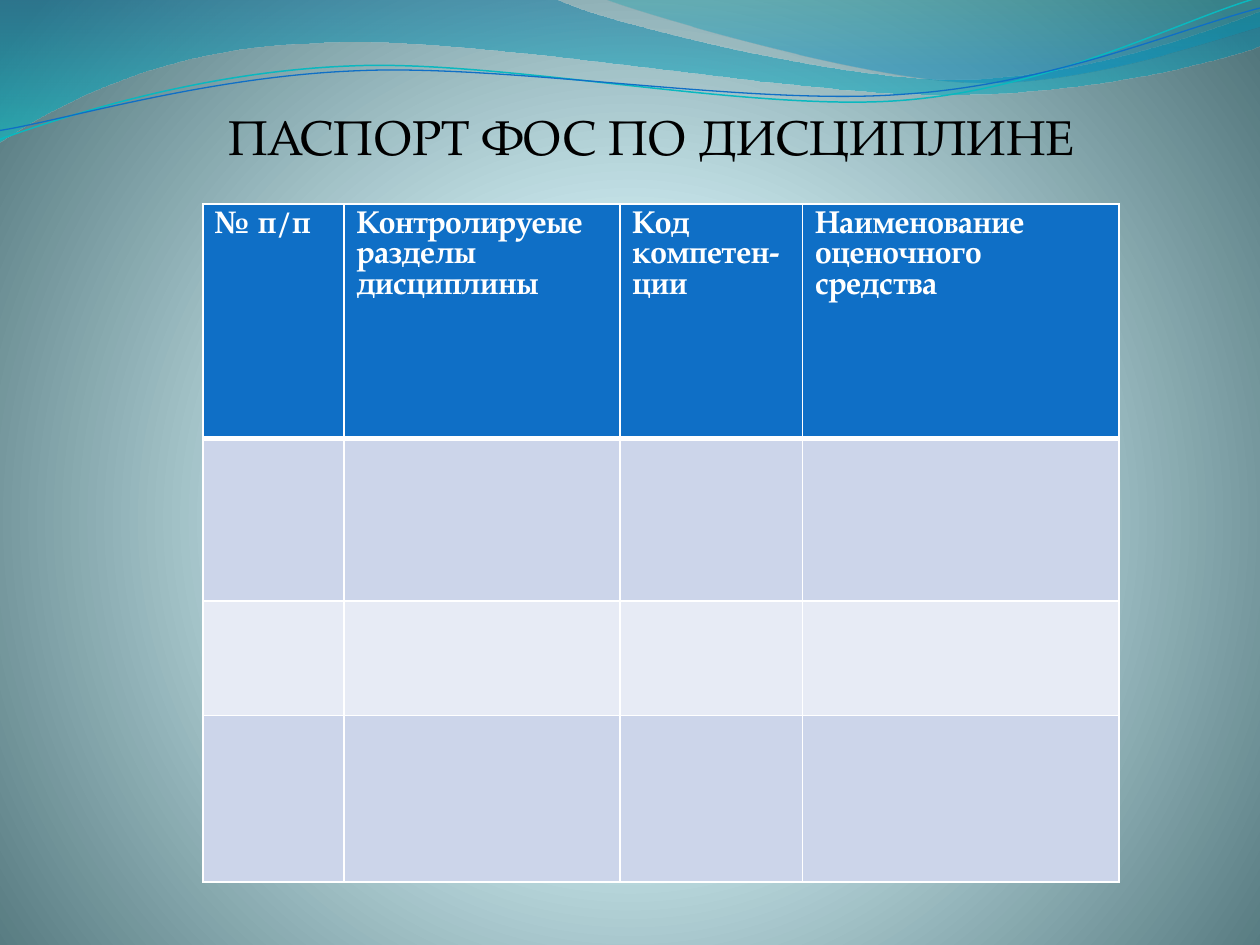
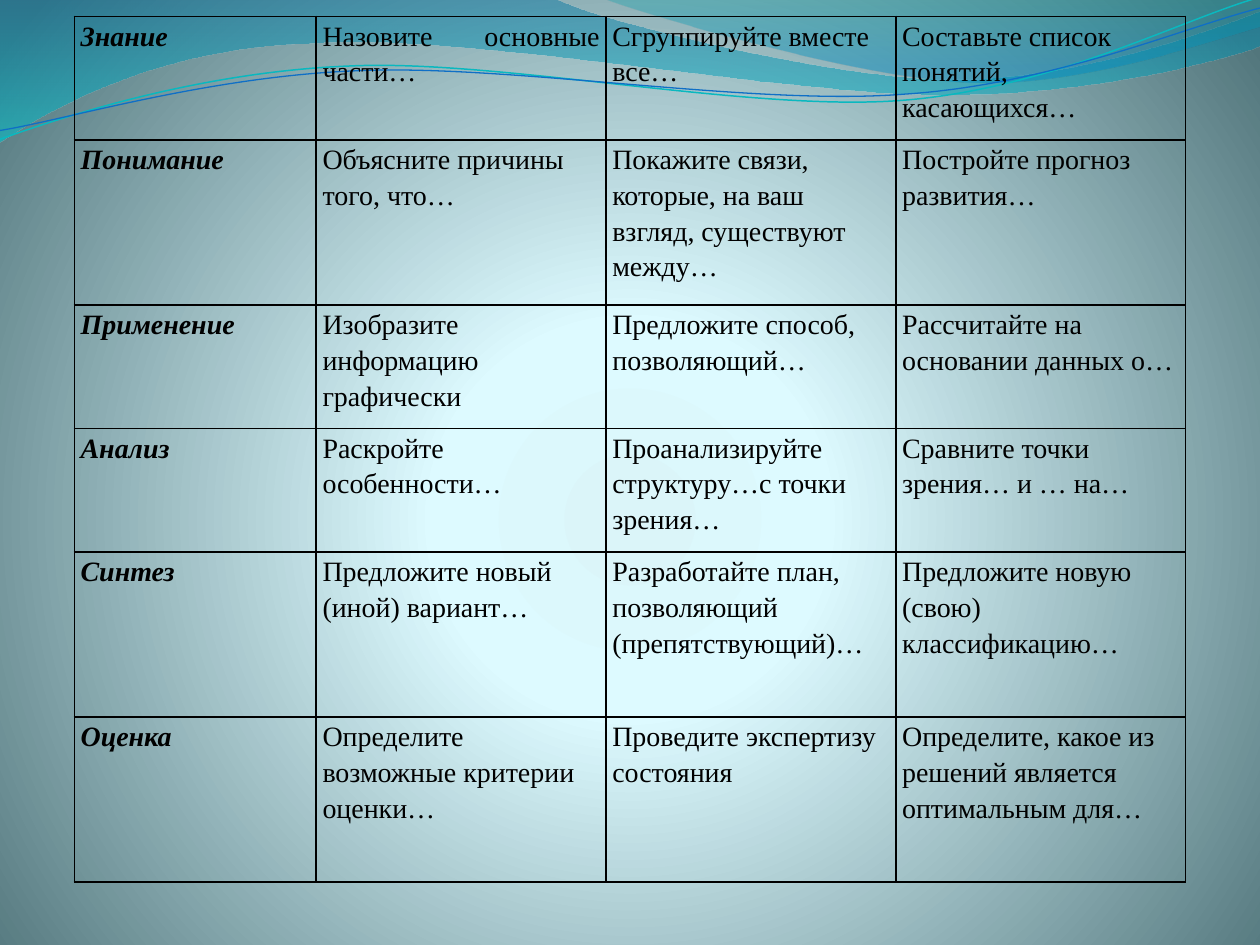
from lxml.etree import SubElement
from pptx import Presentation
from pptx.dml.color import RGBColor
from pptx.enum.text import MSO_ANCHOR as Anchor, PP_ALIGN as Align
from pptx.oxml import parse_xml
from pptx.oxml.ns import nsdecls, qn
from pptx.util import Inches, Pt

rgb = RGBColor.from_string
BLUE, TEAL, WHITE, BLACK = "0F6FC6", "0AB8BF", "FFFFFF", "000000"
BAND_DARK, BAND_LIGHT = "CCD5EA", "E7EBF5"
HEAD_FONT, BODY_FONT = "TeX Gyre Pagella", "Times New Roman"
DOWNWARD = '<a:lin ang="5400000" scaled="1"/>'
FROM_CENTRE = ('<a:path path="circle"><a:fillToRect l="10000" t="110000" '
               'r="10000" b="100000"/></a:path>')


def paint_gradient(owner, fill, stops, direction):
    """Fill with stops of (percent, colour, opacity percent)."""
    fill.gradient()
    plain = next(owner.element.iter(qn("a:gradFill")))
    marks = "".join(
        f'<a:gs pos="{pos * 1000}"><a:srgbClr val="{colour}">'
        f'<a:alpha val="{opacity * 1000}"/></a:srgbClr></a:gs>'
        for pos, colour, opacity in stops)
    plain.getparent().replace(plain, parse_xml(
        f'<a:gradFill {nsdecls("a")} rotWithShape="1">'
        f'<a:gsLst>{marks}</a:gsLst>{direction}</a:gradFill>'))


def add_grid(slide, left, top, widths, heights, border, head_rule=1):
    """Add a table with ruled cells; head_rule is the line under row one."""
    grid = slide.shapes.add_table(
        len(heights), len(widths), Inches(left), Inches(top),
        Inches(sum(widths)), Inches(sum(heights))).table
    grid.first_row = grid.horz_banding = False
    for column, width in zip(grid.columns, widths):
        column.width = Inches(width)
    for r, height in enumerate(heights):
        grid.rows[r].height = Inches(height)
        for cell in grid.rows[r].cells:
            properties = cell._tc.get_or_add_tcPr()
            for side in "LRTB":
                under_head = (r, side) in ((0, "B"), (1, "T"))
                rule = SubElement(properties, qn(f"a:ln{side}"),
                                  w=str(Pt(head_rule if under_head else 1)))
                paint = SubElement(rule, qn("a:solidFill"))
                SubElement(paint, qn("a:srgbClr"), val=border)
    return grid


deck = Presentation()
deck.slide_width, deck.slide_height = Inches(10), Inches(7.5)
passport, questions = [deck.slides.add_slide(deck.slide_layouts[6])
                       for _ in range(2)]

# Shared background
master = deck.slide_master
paint_gradient(master, master.background.fill,
               [(0, "DBF5F9", 100), (25, "DDFAFF", 100), (100, "52767C", 100)],
               FROM_CENTRE)

# Shared waves: a pair is a straight step, six numbers are a Bézier curve
bands = [
    ([(0, 0), (4.4, -0.01), (4.76, 0.17, 6.64, 0.63, 7.58, 0.63),
      (8.53, 0.63, 9.58, 0.26, 10, 0.09), (10.01, 0.36),
      (9.83, 0.44, 8.7, 0.76, 7.46, 0.75), (6.22, 0.75, 3.82, 0.28, 2.57, 0.34),
      (1.29, 0.36, 0.46, 0.83, -0.01, 1.13)],
     [(0, "0074A1", 45), (100, "00C6CF", 55)]),
    ([(4.79, -0.01), (5.09, 0.11, 6.82, 0.62, 7.69, 0.65),
      (8.56, 0.69, 9.61, 0.32, 10, 0.21), (10, 0)],
     [(0, "00A1A9", 30), (80, "008BBF", 45)]),
]
strands = [
    ([(-0.02, 0.87), (0.47, 0.72, 1.58, 0.41, 2.78, 0.42),
      (3.96, 0.42, 5.91, 0.93, 7.12, 0.9), (8.32, 0.87, 9.4, 0.36, 10, 0.22)],
     (TEAL, 0.85)),
    ([(-0.02, 0.8), (0.46, 0.75, 1.64, 0.45, 2.83, 0.46),
      (4.03, 0.46, 5.96, 0.89, 7.16, 0.85), (8.35, 0.83, 9.42, 0.42, 10.02, 0.3)],
     (BLUE, 0.75)),
]
STRAND_TILT = 357.3

for number, (outline, look) in enumerate(bands + strands):
    is_band = isinstance(look, list)
    start, *rest = [(Inches(step[-2]), Inches(step[-1])) for step in outline]
    builder = passport.shapes.build_freeform(*start)
    builder.add_line_segments(rest, close=is_band)
    wave = builder.convert_to_shape()
    straights = list(wave.element.iter(qn("a:lnTo")))
    for straight, step in zip(straights, outline[1:]):
        if len(step) == 6:
            curve = parse_xml(f'<a:cubicBezTo {nsdecls("a")}/>')
            for x, y in zip(step[::2], step[1::2]):
                SubElement(curve, qn("a:pt"), x=str(Inches(x) - wave.left),
                           y=str(Inches(y) - wave.top))
            straight.getparent().replace(straight, curve)
    wave.shadow.inherit = False
    if is_band:
        paint_gradient(wave, wave.fill, look, DOWNWARD)
        wave.line.fill.background()
    else:
        colour, weight = look
        wave.fill.background()
        wave.line.color.rgb = rgb(colour)
        wave.line.width = Pt(weight)
        wave.rotation = STRAND_TILT
    # Move the wave to the master, so that every slide shows it
    next(wave.element.iter(qn("p:cNvPr"))).set("id", str(100 + number))
    master.shapes.element.append(wave.element)

# Slide 1: title
heading = passport.shapes.add_textbox(Inches(0.67), Inches(0.44),
                                      Inches(9), Inches(0.87)).text_frame
heading.word_wrap = True
heading.vertical_anchor = Anchor.BOTTOM
heading.margin_left = heading.margin_right = heading.margin_bottom = 0
heading.text = "ПАСПОРТ ФОС ПО ДИСЦИПЛИНЕ"
heading.paragraphs[0].alignment = Align.CENTER
title_font = heading.paragraphs[0].runs[0].font
title_font.name, title_font.size = HEAD_FONT, Pt(28)
title_font.color.rgb = rgb(BLACK)

# Slide 1: passport form with empty rows
form = add_grid(passport, 1.61, 1.62, [1.12, 2.19, 1.45, 2.51],
                [1.86, 1.29, 0.91, 1.32], WHITE, head_rule=3)
for row, band in zip(form.rows, [BLUE, BAND_DARK, BAND_LIGHT, BAND_DARK]):
    for cell in row.cells:
        cell.fill.solid()
        cell.fill.fore_color.rgb = rgb(band)
form_heads = ["№ п/п", "Контролируеые разделы дисциплины",
              "Код компетен-ции", "Наименование оценочного средства"]
for cell, head in zip(form.rows[0].cells, form_heads):
    cell.text_frame.text = head
    font = cell.text_frame.paragraphs[0].runs[0].font
    font.name, font.size, font.bold = HEAD_FONT, Pt(18), True
    font.color.rgb = rgb(WHITE)

# Slide 2: question starters by level of learning
levels = [
    ("Знание", "Назовите основные части…", "Сгруппируйте вместе все…",
     "Составьте список понятий, касающихся…"),
    ("Понимание", "Объясните причины того, что…",
     "Покажите связи, которые, на ваш взгляд, существуют между…",
     "Постройте прогноз развития…"),
    ("Применение", "Изобразите информацию графически",
     "Предложите способ, позволяющий…", "Рассчитайте на основании данных о…"),
    ("Анализ", "Раскройте особенности…",
     "Проанализируйте структуру…с точки зрения…",
     "Сравните точки зрения… и … на…"),
    ("Синтез", "Предложите новый (иной) вариант…",
     "Разработайте план, позволяющий (препятствующий)…",
     "Предложите новую (свою) классификацию…"),
    ("Оценка", "Определите возможные критерии оценки…",
     "Проведите экспертизу состояния",
     "Определите, какое из решений является оптимальным для…"),
]
SHORT, TALL = 0.98, 1.31
starters = add_grid(questions, 0.59, 0.13, [1.92] + [2.3] * 3,
                    [SHORT, TALL, SHORT, SHORT, TALL, TALL], BLACK)
for r, level in enumerate(levels):
    for c, wording in enumerate(level):
        cell = starters.cell(r, c)
        cell.fill.background()
        cell.margin_left = cell.margin_right = Inches(0.05)
        cell.margin_top = cell.margin_bottom = 0
        cell.text_frame.text = wording
        paragraph = cell.text_frame.paragraphs[0]
        paragraph.line_spacing = 1.15
        if c == 0 or (r, c) == (0, 1):
            paragraph.alignment = Align.JUSTIFY
        font = paragraph.runs[0].font
        font.name, font.size = BODY_FONT, Pt(16)
        font.bold = font.italic = c == 0
        font.color.rgb = rgb(BLACK)

deck.save("out.pptx")
